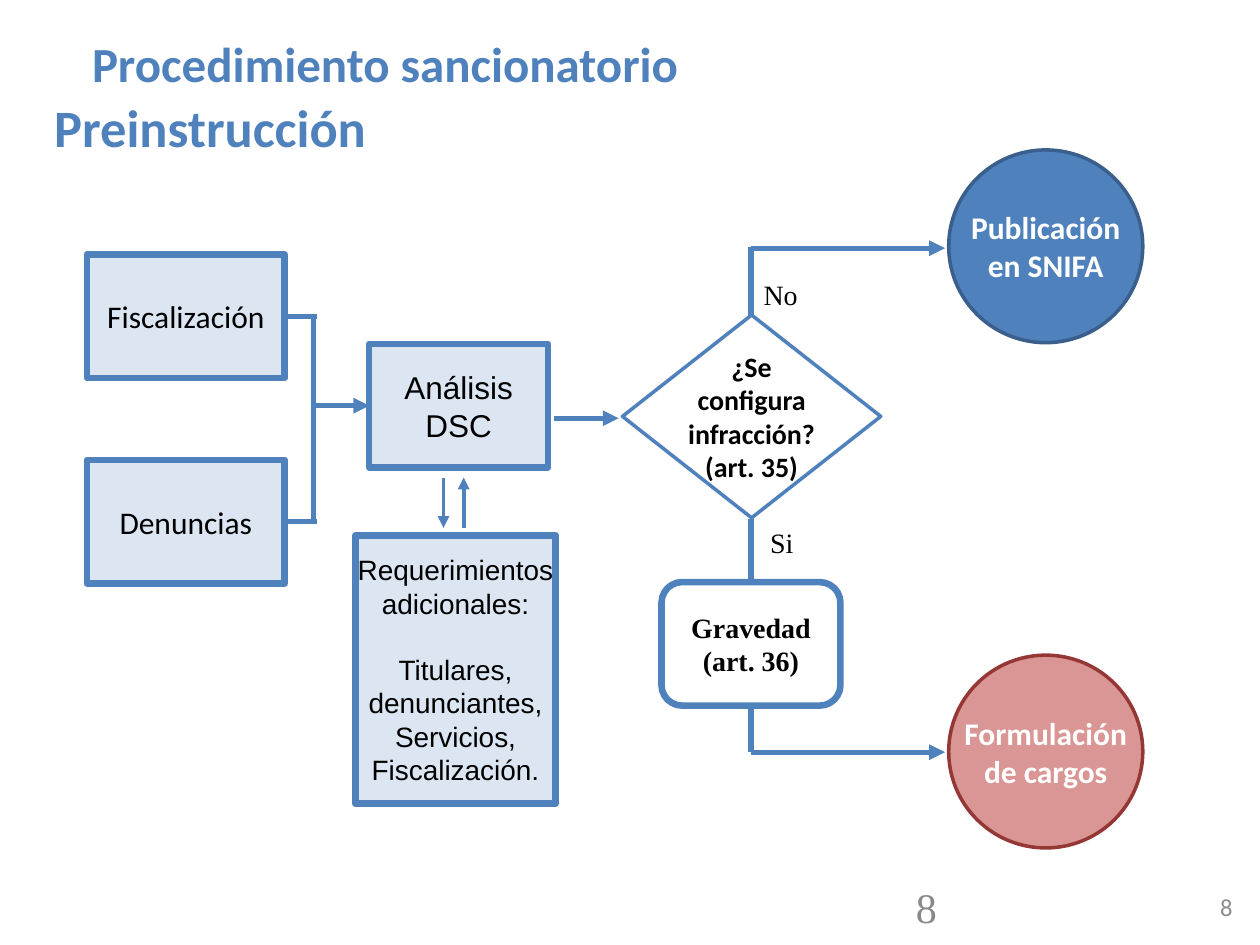
from dataclasses import dataclass

from pptx import Presentation
from pptx.dml.color import RGBColor as Rgb
from pptx.enum.shapes import MSO_CONNECTOR as Conn, MSO_SHAPE as Geo
from pptx.enum.text import MSO_ANCHOR as Anchor, MSO_AUTO_SIZE as Fit, PP_ALIGN as Align
from pptx.oxml.ns import qn
from pptx.util import Inches, Pt


@dataclass(frozen=True)
class Theme:
    blue: str = "4F81BD"
    pale: str = "DCE6F2"
    navy: str = "3A5F8C"
    rose: str = "D99694"
    wine: str = "953735"
    white: str = "FFFFFF"
    black: str = "000000"
    gray: str = "8C8C8C"
    dim: str = "898989"
    sans: str = "Calibri"
    plain: str = "Arial"
    serif: str = "Times New Roman"
    head: int = 28
    sub: int = 30
    page: int = 24
    large: int = 18
    mid: int = 16
    small: int = 14
    thick: float = 3.78
    rule: float = 3
    fine: float = 2.25
    edge: float = 2


class Flow:
    """Draws on a grid of 100 columns by 75 rows."""

    def __init__(self, deck, theme):
        self.theme = theme
        self.unit = deck.slide_width / 100
        self.slide = deck.slides.add_slide(deck.slide_layouts[1])

    def grid(self, *cells):
        return [round(c * self.unit) for c in cells]

    def fill_text(self, shape, lines, size, face, color, bold=False,
                  align=Align.CENTER, anchor=Anchor.MIDDLE, gap=0, tight=False,
                  wrap=True, **form):
        frame = shape.text_frame
        frame.text = "\n".join(lines)
        frame.word_wrap, frame.auto_size = wrap, Fit.NONE
        frame.vertical_anchor = anchor
        if tight:
            for side in ("left", "right", "top", "bottom"):
                setattr(frame, f"margin_{side}", 0)
        look = {"name": face, "size": Pt(size), "bold": bold}
        for i, para in enumerate(frame.paragraphs):
            rules = {"alignment": align, "space_before": Pt(gap if i else 0), **form}
            for name, value in rules.items():
                setattr(para, name, value)
            for run in para.runs:
                for name, value in look.items():
                    setattr(run.font, name, value)
                run.font.color.rgb = Rgb.from_string(color)
        return shape

    def holder(self, shape, area, text, size, **form):
        for name, value in zip(("left", "top", "width", "height"), self.grid(*area)):
            setattr(shape, name, value)
        self.fill_text(shape, [text], size, self.theme.sans, self.theme.blue, True,
                       line_spacing=0.7, space_after=Pt(6), **form)
        props = shape.text_frame.paragraphs[0]._p.get_or_add_pPr()
        for name in ("marL", "indent"):
            props.set(name, "0")
        props.append(props.makeelement(qn("a:buNone"), {}))

    def label(self, area, text, size, face, color, **form):
        box = self.slide.shapes.add_textbox(*self.grid(*area))
        return self.fill_text(box, [text], size, face, color, **form)

    def node(self, geo, area, lines, fill, line, width, size, face, color, **form):
        shape = self.slide.shapes.add_shape(geo, *self.grid(*area))
        shape.shadow.inherit = False
        shape.fill.solid()
        shape.fill.fore_color.rgb = Rgb.from_string(fill)
        shape.line.color.rgb = Rgb.from_string(line)
        shape.line.width = Pt(width)
        return self.fill_text(shape, lines, size, face, color, **form)

    def box(self, area, lines, face, size=None, **form):
        t = self.theme
        return self.node(Geo.RECTANGLE, area, lines, t.pale, t.blue, t.thick,
                         size or t.large, face, t.black, **form)

    def disc(self, top, lines, fill, line):
        t = self.theme
        return self.node(Geo.OVAL, (75.3, top, 15.4, 15.3), lines, fill, line, t.edge,
                         t.large, t.sans, t.white, bold=True, tight=True, wrap=False)

    def link(self, ends, arrow=False, width=None, begin=None, end=None):
        line = self.slide.shapes.add_connector(Conn.STRAIGHT, *self.grid(*ends))
        if begin:
            line.begin_connect(*begin)
        if end:
            line.end_connect(*end)
        line.line.color.rgb = Rgb.from_string(self.theme.blue)
        line.line.width = Pt(width or self.theme.rule)
        props = line._element.spPr
        if arrow:
            stroke = props.find(qn("a:ln"))
            stroke.append(stroke.makeelement(qn("a:tailEnd"), {"type": "triangle"}))
        props.append(props.makeelement(qn("a:effectLst"), {}))


def main():
    deck = Presentation()
    deck.slide_width, deck.slide_height = Inches(10), Inches(7.5)
    t = Theme()
    flow = Flow(deck, t)

    # Headings
    title, body = flow.slide.placeholders
    flow.holder(title, (3.1, 3, 54.9, 5.1), "Procedimiento sancionatorio", t.head)
    flow.holder(body, (3.3, 8.4, 88.6, 4.9), "Preinstrucción", t.sub,
                align=Align.LEFT, anchor=Anchor.TOP)

    # Inputs and analysis
    study = flow.box((29.3, 27.3, 14.2, 9.8), ["Análisis", "DSC"], t.plain)
    rows = {"Fiscalización": 20.2, "Denuncias": 36.5}
    for name, top in rows.items():
        source = flow.box((6.9, top, 15.7, 9.8), [name], t.sans)
        mid = top + 4.9
        flow.link((22.6, mid, 25.2, mid), begin=(source, 3))
    flow.link((24.9, 25.1, 24.9, 41.4))
    flow.link((24.7, 32.2, 29.3, 32.2), arrow=True, end=(study, 1))
    flow.link((44, 33.2, 49.1, 33.2), arrow=True)

    # Further requests
    flow.box((28.2, 42.5, 15.9, 21.3),
             ["Requerimientos adicionales:",
              "Titulares, denunciantes, Servicios, Fiscalización."],
             t.plain, t.mid, tight=True, gap=18.4)
    for x, start, stop in ((35.2, 37.9, 41.9), (36.8, 41.9, 37.9)):
        flow.link((x, start, x, stop), arrow=True, width=t.fine)

    # Branches behind the decision
    for start, stop in ((19.6, 25.2), (41.2, 59.7)):
        flow.link((59.6, start, 59.6, stop))
    for y in (19.7, 59.7):
        flow.link((59.6, y, 75, y), arrow=True)

    # Decision and severity
    flow.node(Geo.DIAMOND, (49.4, 25, 20.5, 16.1),
              ["¿Se configura infracción?", "(art. 35)"], t.white, t.blue, t.edge,
              t.mid, t.sans, t.black, bold=True, tight=True)
    flow.node(Geo.ROUNDED_RECTANGLE, (52.5, 46.2, 14.2, 9.8), ["Gravedad (art. 36)"],
              t.white, t.blue, t.thick, t.mid, t.serif, t.black, bold=True)
    for text, x, y in (("Si", 59.6, 41.2), ("No", 59.5, 21.5)):
        flow.label((x, y, 4.9, 3.7), text, t.mid, t.serif, t.black, anchor=Anchor.TOP)

    # Outcomes
    flow.disc(11.9, ["Publicación", "en SNIFA"], t.blue, t.navy)
    flow.disc(52, ["Formulación", "de cargos"], t.rose, t.wine)

    # Page numbers
    flow.label((91.9, 70, 6.9, 4), "8", t.small, t.sans, t.gray, align=Align.RIGHT)
    flow.label((71.7, 69.5, 23.3, 4), "8", t.page, t.serif, t.dim,
               align=Align.LEFT, anchor=Anchor.TOP)

    deck.save("out.pptx")


if __name__ == "__main__":
    main()
